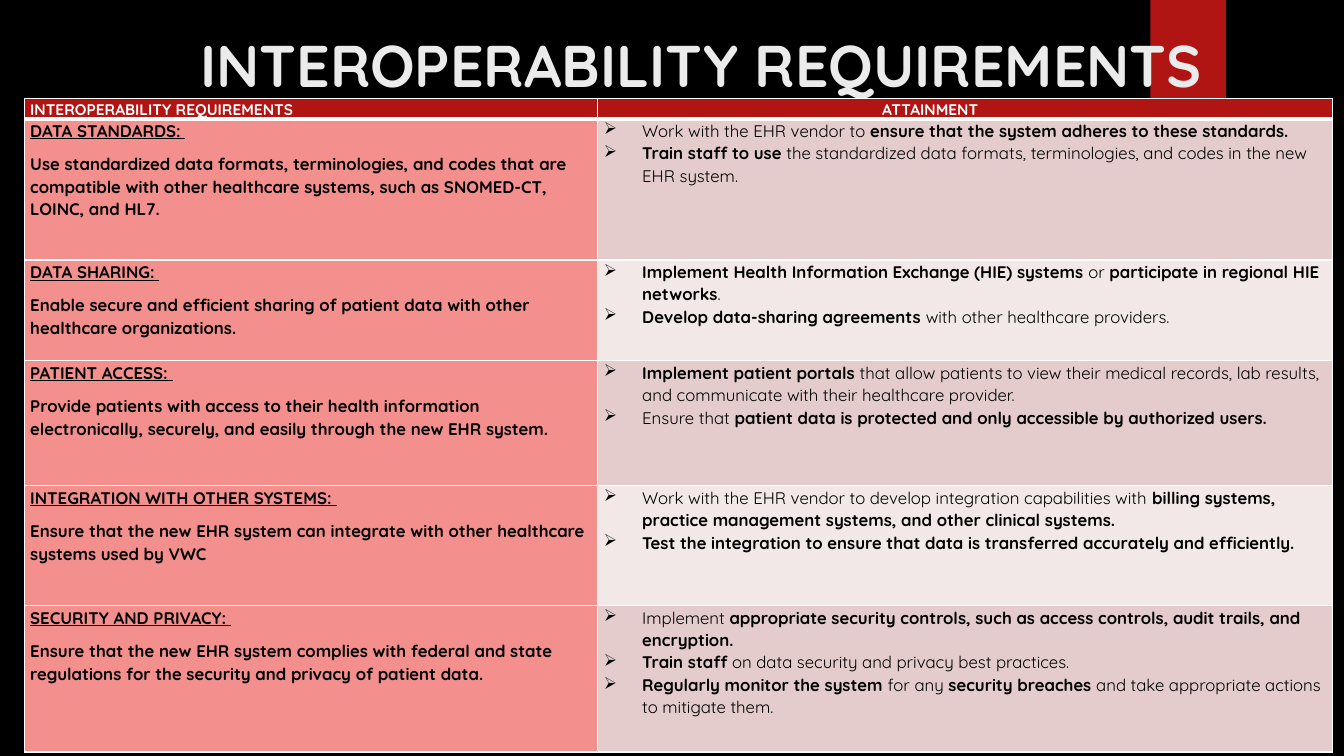
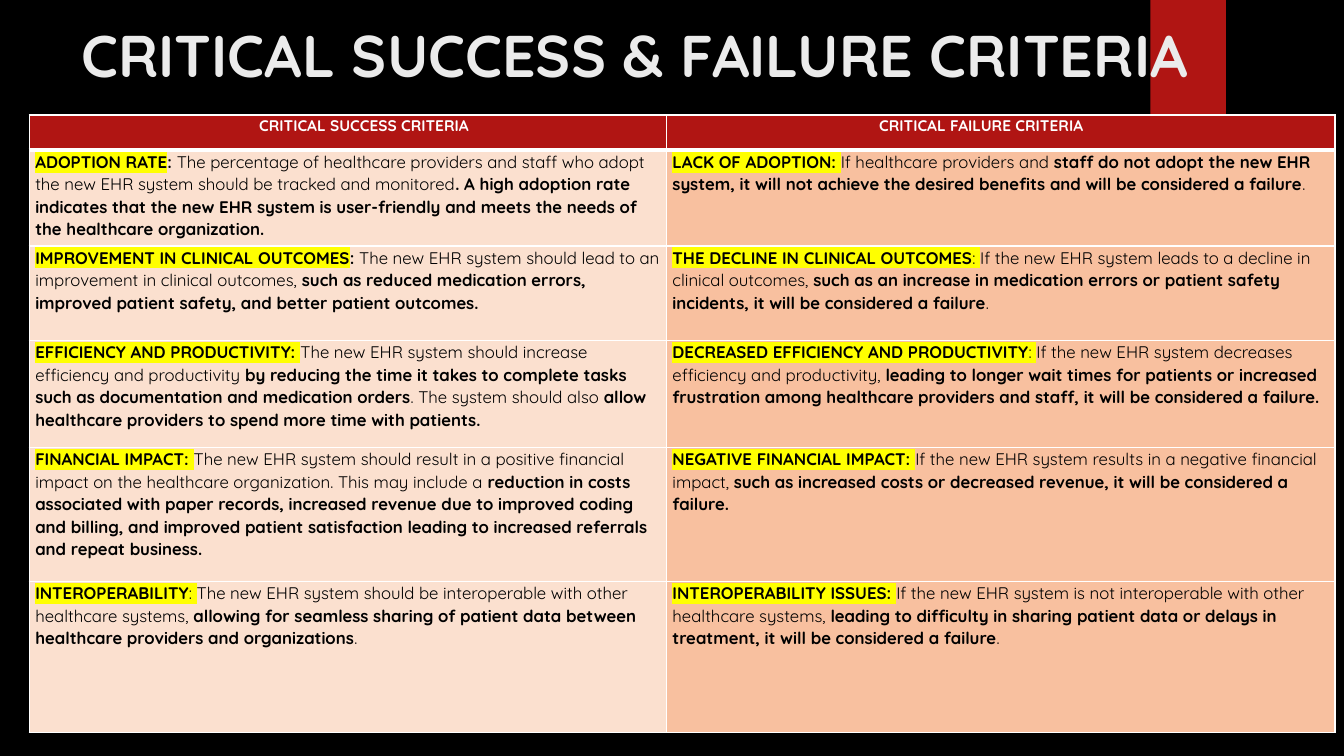
from lxml.etree import SubElement
from pptx import Presentation
from pptx.dml.color import RGBColor as RGB
from pptx.enum.shapes import MSO_SHAPE as SHAPE
from pptx.enum.text import MSO_ANCHOR as ANCHOR
from pptx.oxml.ns import qn
from pptx.util import Inches, Pt

BLACK = RGB(0x00, 0x00, 0x00)
WHITE = RGB(0xFF, 0xFF, 0xFF)
OFF_WHITE = RGB(0xEB, 0xEB, 0xEB)
RED = RGB(0xB0, 0x15, 0x13)
SALMON = RGB(0xF3, 0x8F, 0x8D)
ROSE = RGB(0xE4, 0xCC, 0xCC)
PALE_ROSE = RGB(0xF2, 0xE8, 0xE7)
PEACH = RGB(0xFB, 0xE0, 0xCF)
APRICOT = RGB(0xF8, 0xC0, 0x9F)
YELLOW = RGB(0xFF, 0xFF, 0x00)

FONT = "Quicksand"
LINE_SPACING = 1.07
BULLET_INDENT = 0.38

PLAIN, BOLD, UNDERLINED, MARKED, MARKED_PLAIN = range(5)

REQUIREMENTS = [
    ("DATA STANDARDS: ",
     "Use standardized data formats, terminologies, and codes that are compatible with other "
     "healthcare systems, such as SNOMED-CT, LOINC, and HL7.",
     [[(PLAIN, "Work with the EHR vendor to "),
       (BOLD, "ensure that the system adheres to these standards.")],
      [(BOLD, "Train staff to use "),
       (PLAIN, "the standardized data formats, terminologies, and codes in the new EHR system.")]]),
    ("DATA SHARING: ",
     "Enable secure and efficient sharing of patient data with other healthcare organizations.",
     [[(BOLD, "Implement Health Information Exchange (HIE) systems "), (PLAIN, "or "),
       (BOLD, "participate in regional HIE networks"), (PLAIN, ".")],
      [(BOLD, "Develop data-sharing agreements "), (PLAIN, "with other healthcare providers.")]]),
    ("PATIENT ACCESS: ",
     "Provide patients with access to their health information electronically, securely, and "
     "easily through the new EHR system.",
     [[(BOLD, "Implement patient portals "),
       (PLAIN, "that allow patients to view their medical records, lab results, and communicate "
               "with their healthcare provider.")],
      [(PLAIN, "Ensure that "),
       (BOLD, "patient data is protected and only accessible by authorized users.")]]),
    ("INTEGRATION WITH OTHER SYSTEMS: ",
     "Ensure that the new EHR system can integrate with other healthcare systems used by VWC",
     [[(PLAIN, "Work with the EHR vendor to develop integration capabilities with"),
       (BOLD, " billing systems, practice management systems, and other clinical systems.")],
      [(BOLD, "Test the integration to ensure that data is transferred accurately and "
              "efficiently.")]]),
    ("SECURITY AND PRIVACY: ",
     "Ensure that the new EHR system complies with federal and state regulations for the "
     "security and privacy of patient data.",
     [[(PLAIN, "Implement "),
       (BOLD, "appropriate security controls, such as access controls, audit trails, and "
              "encryption.")],
      [(BOLD, "Train staff "), (PLAIN, "on data security and privacy best practices.")],
      [(BOLD, "Regularly monitor the system "), (PLAIN, "for any "), (BOLD, "security breaches "),
       (PLAIN, "and take appropriate actions to mitigate them.")]]),
]

CRITERIA = [
    ([(MARKED, "ADOPTION RATE"), (BOLD, ": "),
      (PLAIN, "The percentage of healthcare providers and staff who adopt the new EHR system "
              "should be tracked and monitored"),
      (BOLD, ". A high adoption rate indicates that the new EHR system is user-friendly and "
             "meets the needs of the healthcare organization.")],
     [(MARKED, "LACK OF ADOPTION:"), (MARKED_PLAIN, " "),
      (PLAIN, "If healthcare providers and "),
      (BOLD, "staff do not adopt the new EHR system, it will not achieve the desired benefits "
             "and will be considered a failure"), (PLAIN, ".")]),
    ([(MARKED, "IMPROVEMENT IN CLINICAL OUTCOMES"), (BOLD, ": "),
      (PLAIN, "The new EHR system should lead to an improvement in clinical outcomes, "),
      (BOLD, "such as reduced medication errors, improved patient safety, and better patient "
             "outcomes.")],
     [(MARKED, "THE DECLINE IN CLINICAL OUTCOMES"), (MARKED_PLAIN, ": "),
      (PLAIN, "If the new EHR system leads to a decline in clinical outcomes, "),
      (BOLD, "such as an increase in medication errors or patient safety incidents, it will be "
             "considered a failure"), (PLAIN, ".")]),
    ([(MARKED, "EFFICIENCY AND PRODUCTIVITY: "),
      (PLAIN, "The new EHR system should increase efficiency and productivity "),
      (BOLD, "by reducing the time it takes to complete tasks such as documentation and "
             "medication orders"),
      (PLAIN, ". The system should also "),
      (BOLD, "allow healthcare providers to spend more time with patients.")],
     [(MARKED, "DECREASED EFFICIENCY AND PRODUCTIVITY"), (MARKED_PLAIN, ": "),
      (PLAIN, "If the new EHR system decreases efficiency and productivity, "),
      (BOLD, "leading to longer wait times for patients or increased frustration among "
             "healthcare providers and staff, it will be considered a failure.")]),
    ([(MARKED, "FINANCIAL IMPACT: "),
      (PLAIN, "The new EHR system should result in a positive financial impact on the "
              "healthcare organization. This may include a "),
      (BOLD, "reduction in costs associated with paper records, increased revenue due to "
             "improved coding and billing, and improved patient satisfaction leading to "
             "increased referrals and repeat business.")],
     [(MARKED, "NEGATIVE FINANCIAL IMPACT: "),
      (PLAIN, "If the new EHR system results in a negative financial impact, "),
      (BOLD, "such as increased costs or decreased revenue, it will be considered a failure.")]),
    ([(MARKED, "INTEROPERABILITY"), (MARKED_PLAIN, ": "),
      (PLAIN, "The new EHR system should be interoperable with other healthcare systems, "),
      (BOLD, "allowing for seamless sharing of patient data between healthcare providers and "
             "organizations"), (PLAIN, ".")],
     [(MARKED, "INTEROPERABILITY ISSUES: "),
      (PLAIN, "If the new EHR system is not interoperable with other healthcare systems, "),
      (BOLD, "leading to difficulty in sharing patient data or delays in treatment, it will be "
             "considered a failure"), (PLAIN, ".")]),
]


def add_run(p, text, size, color, style=BOLD):
    r = p.add_run()
    r.text = text
    r.font.size = Pt(size)
    r.font.bold = style not in (PLAIN, MARKED_PLAIN)
    r.font.underline = style == UNDERLINED
    r.font.color.rgb = color
    if style in (MARKED, MARKED_PLAIN):
        mark = SubElement(r.font._element, qn("a:highlight"))
        SubElement(mark, qn("a:srgbClr"), val=str(YELLOW))
    r.font.name = FONT


def indent(p, left, first=0):
    pPr = p._p.get_or_add_pPr()
    pPr.set("marL", str(Inches(left)))
    pPr.set("indent", str(Inches(first)))
    return pPr


def add_bullet(p):
    pPr = indent(p, BULLET_INDENT, -BULLET_INDENT)
    SubElement(pPr, qn("a:buChar"), char="➢")


def fill_cell(cell, paragraphs, fill, size=12, color=BLACK, bulleted=False, left=0, after=0):
    tf = cell.text_frame
    for i, runs in enumerate(paragraphs):
        p = tf.add_paragraph() if i else tf.paragraphs[0]
        if bulleted:
            add_bullet(p)
        elif left:
            indent(p, left)
        p.line_spacing = LINE_SPACING
        p.space_after = Pt(after)
        for style, text in runs:
            add_run(p, text, size, color, style)
    cell.fill.solid()
    cell.fill.fore_color.rgb = fill


def add_borders(cell, top=1, bottom=1):
    tcPr = cell._tc.get_or_add_tcPr()
    for side, width in (("lnL", 1), ("lnR", 1), ("lnT", top), ("lnB", bottom)):
        ln = SubElement(tcPr, qn("a:" + side), w=str(Pt(width)))
        line_fill = SubElement(ln, qn("a:solidFill"))
        SubElement(line_fill, qn("a:srgbClr"), val=str(WHITE))


def add_grid(s, left, top, widths, heights, headers):
    frame = s.shapes.add_table(len(heights), len(widths), Inches(left), Inches(top),
                               Inches(sum(widths)), Inches(sum(heights)))
    table = frame.table
    for column, width in zip(table.columns, widths):
        column.width = Inches(width)
    for i, (row, height) in enumerate(zip(table.rows, heights)):
        row.height = Inches(height)
        for cell in row.cells:
            cell.margin_left = cell.margin_right = Inches(0.06)
            cell.margin_top = cell.margin_bottom = 0
            add_borders(cell, top=3 if i == 1 else 1, bottom=1 if i else 3)
    for cell, (text, offset) in zip(table.rows[0].cells, headers):
        fill_cell(cell, [[(BOLD, text)]], RED, size=11, color=WHITE, left=offset)
    return table


def add_base(prs, title, left, top, width):
    s = prs.slides.add_slide(prs.slide_layouts[6])
    band = s.shapes.add_shape(SHAPE.RECTANGLE, Inches(11.41), 0, Inches(0.75), Inches(1.25))
    band.shadow.inherit = False
    band.fill.solid()
    band.fill.fore_color.rgb = RED
    band.line.fill.background()
    tf = s.shapes.add_textbox(Inches(left), Inches(top), Inches(width), Inches(0.83)).text_frame
    tf.word_wrap = True
    tf.vertical_anchor = ANCHOR.TOP
    add_run(tf.paragraphs[0], title, 42, OFF_WHITE)
    return s


def add_requirements_slide(prs):
    s = add_base(prs, "INTEROPERABILITY REQUIREMENTS", 1.89, 0.24, 11.33)
    table = add_grid(s, 0.24, 0.98, [5.69, 7.29], [0.2, 1.4, 1, 1.24, 1.19, 1.45],
                     [("INTEROPERABILITY REQUIREMENTS", 0), ("ATTAINMENT", 2.76)])
    for i, (heading, need, actions) in enumerate(REQUIREMENTS, 1):
        fill_cell(table.cell(i, 0), [[(UNDERLINED, heading)], [(BOLD, need)]], SALMON, after=8)
        fill_cell(table.cell(i, 1), actions, ROSE if i % 2 else PALE_ROSE, bulleted=True)


def add_criteria_slide(prs):
    s = add_base(prs, "CRITICAL SUCCESS & FAILURE CRITERIA", 0.71, 0.14, 12.28)
    table = add_grid(s, 0.29, 1.14, [6.32, 6.63], [0.35, 0.95, 0.94, 1.06, 1.33, 1.5],
                     [("CRITICAL SUCCESS CRITERIA", 2.22), ("CRITICAL FAILURE CRITERIA", 2.05)])
    for i, (success, failure) in enumerate(CRITERIA, 1):
        fill_cell(table.cell(i, 0), [success], PEACH)
        fill_cell(table.cell(i, 1), [failure], APRICOT)


def main():
    prs = Presentation()
    prs.slide_width, prs.slide_height = Inches(13.33), Inches(7.5)
    background = prs.slide_master.background.fill
    background.solid()
    background.fore_color.rgb = BLACK
    add_requirements_slide(prs)
    add_criteria_slide(prs)
    prs.save("out.pptx")


if __name__ == "__main__":
    main()
